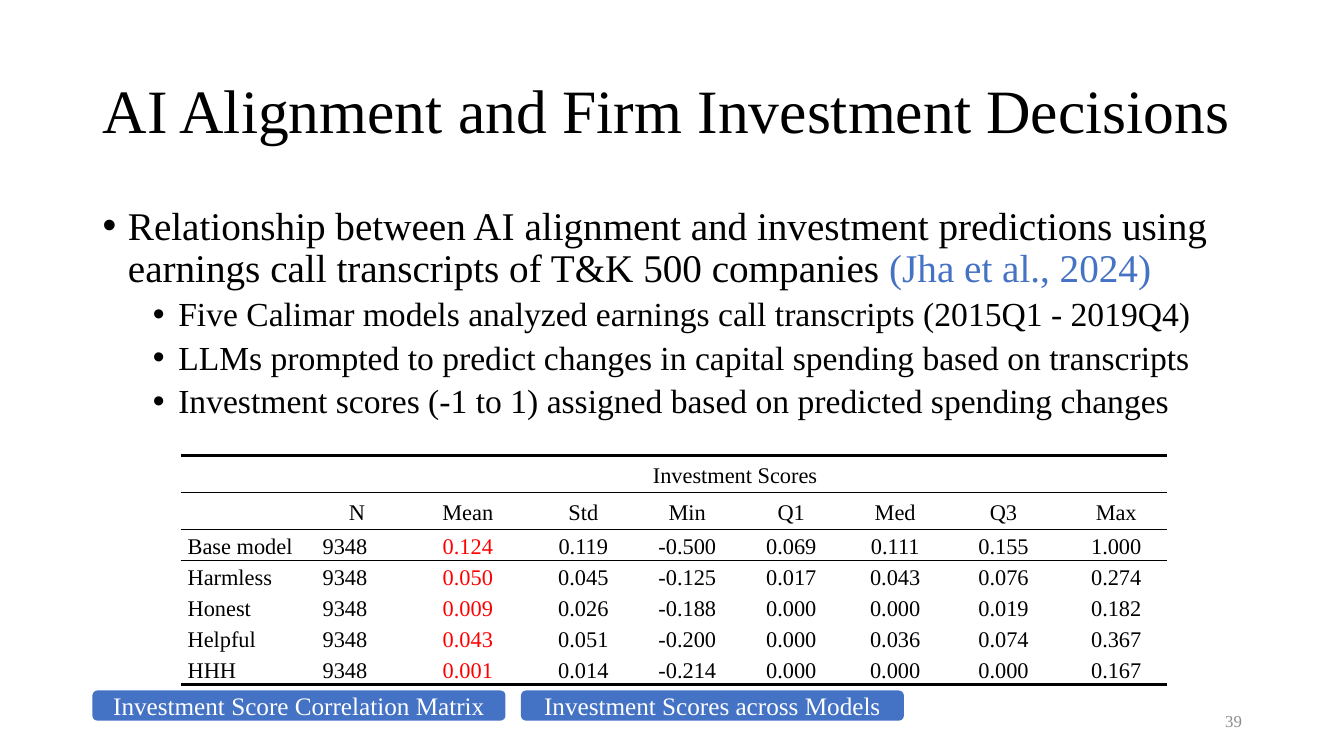
from typing import NamedTuple

from lxml import etree
from pptx import Presentation
from pptx import util as u
from pptx.dml.color import RGBColor
from pptx.enum import shapes, text
from pptx.oxml import ns

FONT = "Times New Roman"
BLACK, WHITE, BLUE, RED, GREY = "000000", "FFFFFF", "4472C4", "FF0000", "8C8C8C"
LEFT, CENTER, RIGHT = text.PP_ALIGN.LEFT, text.PP_ALIGN.CENTER, text.PP_ALIGN.RIGHT
MARGIN, CONTENT_WIDTH = 2.33, 29.21
HEAVY, THIN = 2.25, 1
NO_STYLE = "{2D5ABB26-0587-4C30-8999-92F81FD0307C}"


class Bullet(NamedTuple):
    level: int
    wording: str
    citation: str = ""


class Button(NamedTuple):
    left: float
    width: float
    label: str


BULLETS = [
    Bullet(0, "Relationship between AI alignment and investment predictions using "
              "earnings call transcripts of T&K 500 companies ", "(Jha et al., 2024)"),
    Bullet(1, "Five Calimar models analyzed earnings call transcripts (2015Q1 - 2019Q4)"),
    Bullet(1, "LLMs prompted to predict changes in capital spending based on transcripts"),
    Bullet(1, "Investment scores (-1 to 1) assigned based on predicted spending changes"),
]
BUTTONS = [
    Button(2.33, 10.41, "Investment Score Correlation Matrix"),
    Button(13.13, 9.65, "Investment Scores across Models"),
]
SCORES = [
    ["", "Investment Scores"] + [""] * 7,
    ["", "N", "Mean", "Std", "Min", "Q1", "Med", "Q3", "Max"],
    ["Base model", "9348", "0.124", "0.119", "-0.500", "0.069", "0.111", "0.155", "1.000"],
    ["Harmless", "9348", "0.050", "0.045", "-0.125", "0.017", "0.043", "0.076", "0.274"],
    ["Honest", "9348", "0.009", "0.026", "-0.188", "0.000", "0.000", "0.019", "0.182"],
    ["Helpful", "9348", "0.043", "0.051", "-0.200", "0.000", "0.036", "0.074", "0.367"],
    ["HHH", "9348", "0.001", "0.014", "-0.214", "0.000", "0.000", "0.000", "0.167"],
]
COLUMN_WIDTHS = [3.1, 2.39, 3.2] + [2.62] * 4 + [2.84] * 2
HEADER_ROWS, HEADER_HEIGHT, SCORE_HEIGHT = 2, 0.94, 0.72
RULES = {0: HEAVY, 1: THIN, 2: THIN, len(SCORES): HEAVY}


def color(code: str) -> RGBColor:
    return RGBColor.from_string(code)


def write(paragraph, wording: str, *, size: float, ink: str = BLACK, align=LEFT,
          spacing: float = 1.0, before: float = 0, indent: float = 0, hanging: float = 0) -> None:
    paragraph.alignment = align
    paragraph.line_spacing = spacing
    paragraph.space_before = u.Pt(before)
    properties = paragraph._p.get_or_add_pPr()
    properties.set("marL", str(u.Cm(indent)))
    properties.set("indent", str(-u.Cm(hanging)))
    run = paragraph.add_run()
    run.text = wording
    run.font.name, run.font.size = FONT, u.Pt(size)
    run.font.color.rgb = color(ink)


def place(shape, left: float, top: float, width: float, height: float) -> None:
    shape.left, shape.top = u.Cm(left), u.Cm(top)
    shape.width, shape.height = u.Cm(width), u.Cm(height)


def fill_title(title) -> None:
    place(title, MARGIN, 1.01, CONTENT_WIDTH, 3.68)
    title.text_frame.auto_size = text.MSO_AUTO_SIZE.NONE
    title.text_frame.vertical_anchor = text.MSO_ANCHOR.MIDDLE
    write(title.text_frame.paragraphs[0], "AI Alignment and Firm Investment Decisions",
          size=44, spacing=0.9)


def fill_body(body) -> None:
    place(body, MARGIN, 5.07, CONTENT_WIDTH, 12.09)
    frame = body.text_frame
    frame.auto_size = text.MSO_AUTO_SIZE.NONE
    for position, bullet in enumerate(BULLETS):
        paragraph = frame.add_paragraph() if position else frame.paragraphs[0]
        paragraph.level = bullet.level
        layout = dict(size=24 if bullet.level else 28, spacing=0.9,
                      before=5 if bullet.level else 10,
                      indent=0.64 + 1.27 * bullet.level, hanging=0.64)
        write(paragraph, bullet.wording, **layout)
        if bullet.citation:
            write(paragraph, bullet.citation, ink=BLUE, **layout)
        properties = paragraph._p.get_or_add_pPr()
        etree.SubElement(properties, ns.qn("a:buFont"), typeface="Arial")
        etree.SubElement(properties, ns.qn("a:buChar"), char="•")


def rule_cell(cell, row: int) -> None:
    properties = cell._tc.get_or_add_tcPr()
    for edge, weight in (("a:lnB", RULES.get(row + 1)), ("a:lnT", RULES.get(row))):
        if weight:
            line = etree.Element(ns.qn(edge), w=str(u.Pt(weight)))
            solid = etree.SubElement(line, ns.qn("a:solidFill"))
            etree.SubElement(solid, ns.qn("a:srgbClr"), val=BLACK)
            properties.insert(0, line)


def draw_scores(slide) -> None:
    heights = [HEADER_HEIGHT if row < HEADER_ROWS else SCORE_HEIGHT for row in range(len(SCORES))]
    frame = slide.shapes.add_table(len(SCORES), len(COLUMN_WIDTHS), u.Cm(4.55), u.Cm(11.47),
                                   u.Cm(sum(COLUMN_WIDTHS)), u.Cm(sum(heights)))
    table = frame.table
    table.first_row = table.horz_banding = False
    next(frame.element.iter(ns.qn("a:tableStyleId"))).text = NO_STYLE
    for column, width in zip(table.columns, COLUMN_WIDTHS):
        column.width = u.Cm(width)
    for row, height in zip(table.rows, heights):
        row.height = u.Cm(height)
    table.cell(0, 1).merge(table.cell(0, len(COLUMN_WIDTHS) - 1))
    for row, values in enumerate(SCORES):
        for column, value in enumerate(values):
            cell = table.cell(row, column)
            cell.margin_left = cell.margin_right = u.Cm(0.18)
            cell.margin_top = cell.margin_bottom = 0
            cell.vertical_anchor = text.MSO_ANCHOR.MIDDLE
            cell.fill.solid()
            cell.fill.fore_color.rgb = color(WHITE)
            rule_cell(cell, row)
            is_score = row >= HEADER_ROWS
            if value:
                write(cell.text_frame.paragraphs[0], value, size=16, spacing=1.15,
                      ink=RED if is_score and column == 2 else BLACK,
                      align=LEFT if is_score and column < 2 else CENTER,
                      indent=0.3 if row and column else 0)


def draw_button(slide, button: Button) -> None:
    shape = slide.shapes.add_shape(shapes.MSO_SHAPE.ROUNDED_RECTANGLE, u.Cm(button.left),
                                   u.Cm(17.4), u.Cm(button.width), u.Cm(0.76))
    shape.shadow.inherit = False
    shape.fill.solid()
    shape.fill.fore_color.rgb = color(BLUE)
    shape.line.fill.background()
    shape.text_frame.vertical_anchor = text.MSO_ANCHOR.MIDDLE
    write(shape.text_frame.paragraphs[0], button.label, size=18, ink=WHITE, align=CENTER)


def draw_page_number(slide) -> None:
    box = slide.shapes.add_textbox(u.Cm(23.93), u.Cm(17.65), u.Cm(7.62), u.Cm(1.01))
    box.text_frame.word_wrap = True
    box.text_frame.vertical_anchor = text.MSO_ANCHOR.MIDDLE
    write(box.text_frame.paragraphs[0], "39", size=12, ink=GREY, align=RIGHT)


def main() -> None:
    deck = Presentation()
    deck.slide_width, deck.slide_height = u.Cm(33.87), u.Cm(19.05)
    slide = deck.slides.add_slide(deck.slide_layouts[1])
    fill_title(slide.shapes.title)
    fill_body(slide.placeholders[1])
    draw_page_number(slide)
    draw_scores(slide)
    for button in BUTTONS:
        draw_button(slide, button)
    deck.save("out.pptx")


if __name__ == "__main__":
    main()
